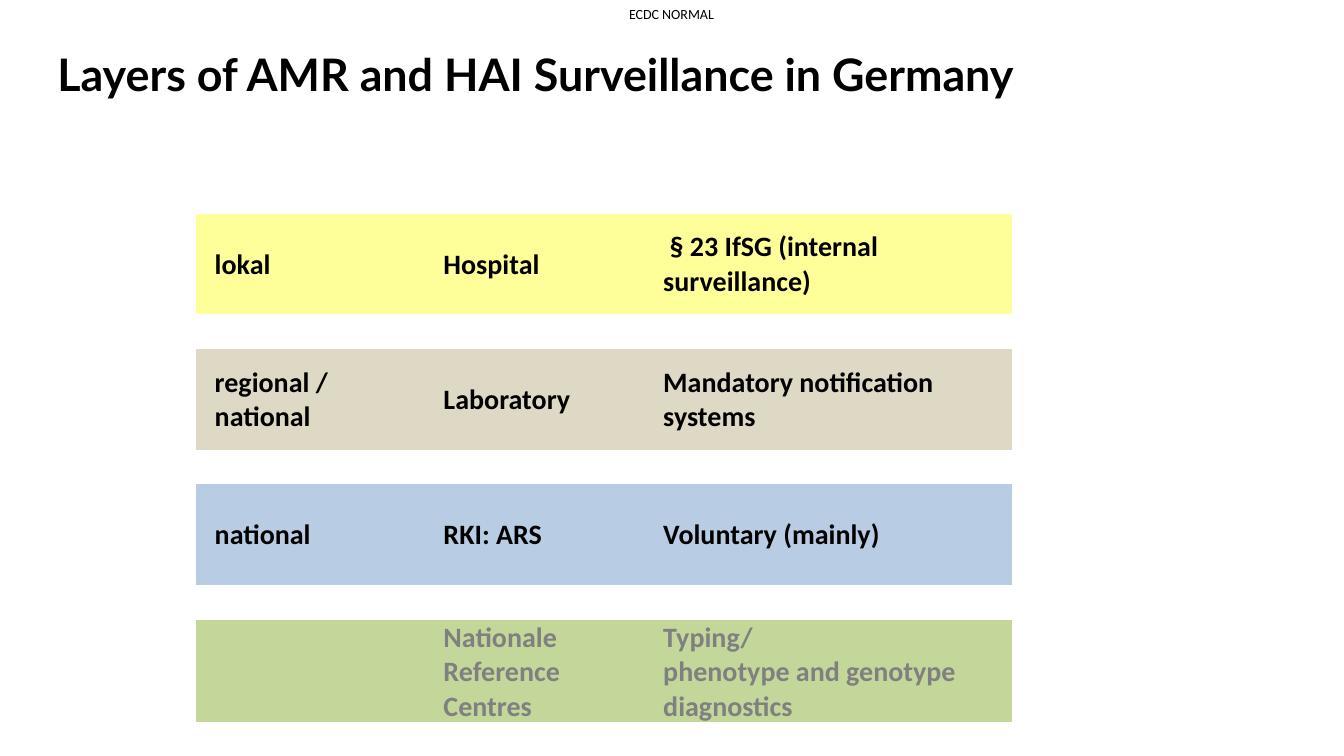
from lxml.etree import SubElement
from pptx import Presentation
from pptx.dml.color import RGBColor as RGB
from pptx.enum.text import MSO_ANCHOR as Anchor, MSO_AUTO_SIZE as Fit, PP_ALIGN as Align
from pptx.oxml.ns import qn
from pptx.util import Pt

# Content
MARK = "ECDC NORMAL"
TITLE = "Layers of AMR and HAI Surveillance in Germany"
LAYERS = [
    ("yellow", "black", ("lokal", "Hospital", " § 23 IfSG (internal surveillance)")),
    ("sand", "black", ("regional / national", "Laboratory", "Mandatory notification systems")),
    ("blue", "black", ("national", "RKI: ARS", "Voluntary (mainly)")),
    ("green", "gray", ("", "Nationale \nReference Centres",
                       "Typing/\nphenotype and genotype diagnostics")),
]

# Theme and measures in points
THEME = {
    "black": "000000", "gray": "808080", "white": "FFFFFF", "yellow": "FFFF99",
    "sand": "DDD9C4", "blue": "B8CCE4", "green": "C4D79B",
    "head": "Lato", "body": "Calibri", "title": 32, "cell": 20, "mark": 10,
}
WIDE, HIGH = 960, 540
COLS = (163.4, 157, 262.8)
BAND, GAP = 72, 23
LEFT, TOP = 139.7, 152.6
PLAIN = "{2D5ABB26-0587-4C30-8999-92F81FD0307C}"


def apply(item, **vals):
    for key, val in vals.items():
        setattr(item, key, val)


def place(item, left, top, width, height):
    apply(item, left=Pt(left), top=Pt(top), width=Pt(width), height=Pt(height))


def write(para, text, face, size, tint="black", bold=True):
    para.text = text
    for run in para.runs:
        apply(run.font, name=THEME[face], size=Pt(THEME[size]), bold=bold)
        run.font.color.rgb = RGB.from_string(THEME[tint])


def paint(cell, fill, text="", tint="black"):
    cell.fill.solid()
    cell.fill.fore_color.rgb = RGB.from_string(THEME[fill])
    apply(cell, vertical_anchor=Anchor.MIDDLE, margin_left=Pt(13.7),
          margin_right=Pt(0.7), margin_top=Pt(0.7), margin_bottom=Pt(0))
    para = cell.text_frame.paragraphs[0]
    if text:
        write(para, text, "body", "cell", tint)
    else:
        SubElement(para._p, qn("a:endParaRPr"), sz=str(THEME["cell"] * 100))


deck = Presentation()
apply(deck, slide_width=Pt(WIDE), slide_height=Pt(HIGH))
slide = deck.slides.add_slide(deck.slide_layouts[5])

# Title
title = slide.shapes.title
place(title, 33.8, 17.3, 815, 74.9)
title.text_frame.vertical_anchor = Anchor.MIDDLE
para = title.text_frame.paragraphs[0]
write(para, TITLE, "head", "title")
apply(para, alignment=Align.LEFT, line_spacing=0.9)

# Marking at the top
mark = slide.shapes.add_textbox(Pt(449.3), Pt(5), Pt(63.4), Pt(12.2))
apply(mark.text_frame, word_wrap=False, auto_size=Fit.SHAPE_TO_FIT_TEXT,
      margin_left=0, margin_right=0, margin_top=0, margin_bottom=0)
para = mark.text_frame.paragraphs[0]
write(para, MARK, "body", "mark", bold=False)
para.line_spacing = 0.9

# Table: coloured bands with white gaps between
count = 2 * len(LAYERS) - 1
tall = len(LAYERS) * BAND + (len(LAYERS) - 1) * GAP
table = slide.shapes.add_table(count, len(COLS), Pt(LEFT), Pt(TOP),
                               Pt(sum(COLS)), Pt(tall)).table
apply(table, first_row=False, horz_banding=False)
table._tbl.tblPr.find(qn("a:tableStyleId")).text = PLAIN
for col, width in zip(table.columns, COLS):
    col.width = Pt(width)
for at, row in enumerate(table.rows):
    row.height = Pt(GAP if at % 2 else BAND)
    fill, tint, texts = ("white", "black", ("",) * len(COLS)) if at % 2 else LAYERS[at // 2]
    for cell, text in zip(row.cells, texts):
        paint(cell, fill, text, tint)

deck.save("out.pptx")
